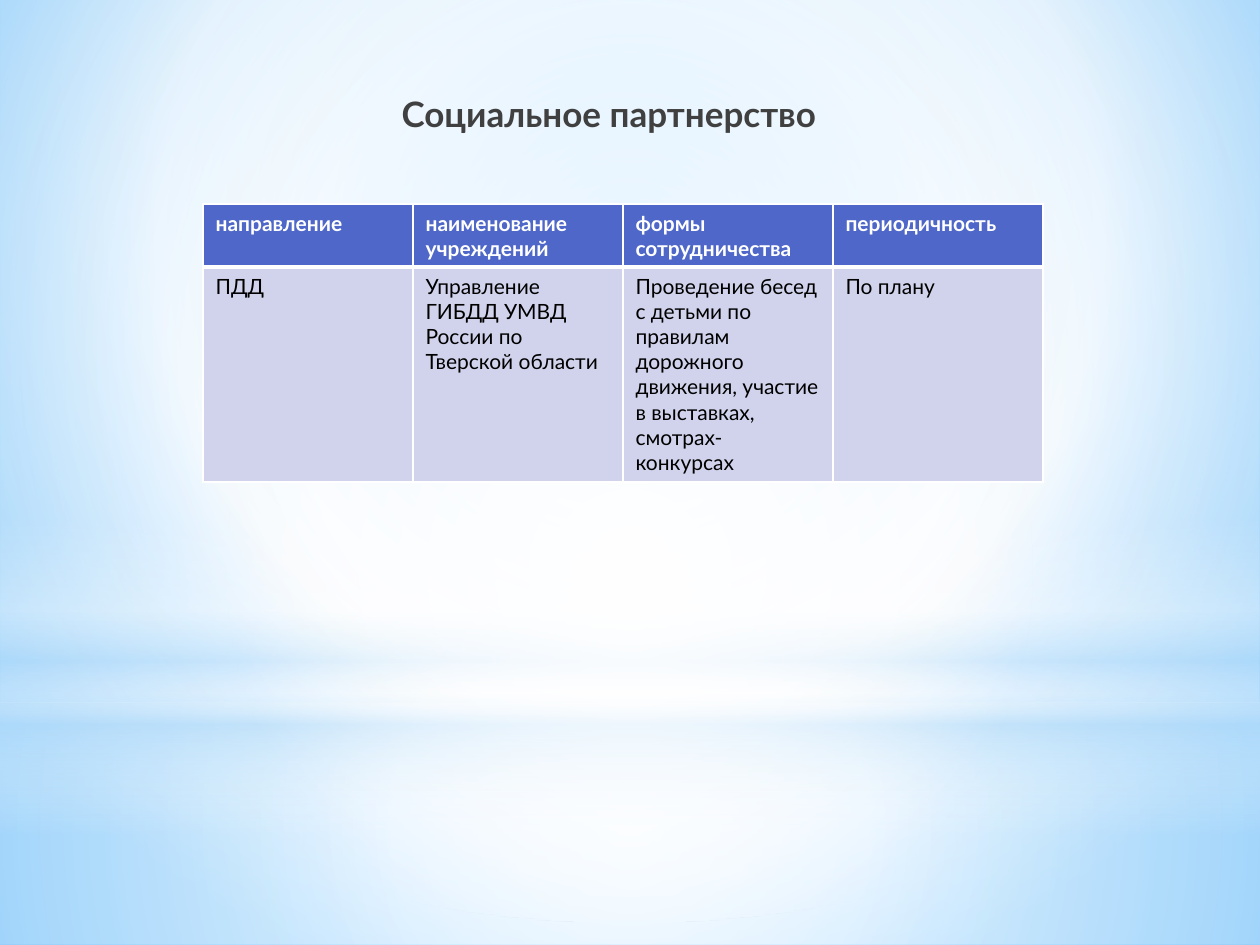
from dataclasses import dataclass

from lxml.etree import SubElement
from pptx import Presentation
from pptx.dml.color import RGBColor
from pptx.enum.shapes import MSO_SHAPE
from pptx.enum.text import MSO_ANCHOR, MSO_AUTO_SIZE, PP_ALIGN
from pptx.oxml import parse_xml
from pptx.oxml.ns import nsdecls, qn
from pptx.util import Pt

PX = 914400 // 126  # one px in EMU


@dataclass(frozen=True)
class Theme:
    font: str = "Lato"
    title_size: int = 20
    table_size: int = 12
    title: str = "404040"
    header: str = "4E67C8"
    body: str = "D0D3EB"
    white: str = "FFFFFF"
    black: str = "000000"
    haze: str = "B4DCFA"
    sky: str = "9ED5FF"
    edge: str = "5BB9FF"


THEME = Theme()
CENTRE = (50, 50, 50, 50)
HEADERS = ["направление", "наименование учреждений",
           "формы сотрудничества", "периодичность"]
PARTNERS = ["ПДД", "Управление ГИБДД УМВД России по Тверской области",
            "Проведение бесед с детьми по правилам дорожного движения, "
            "участие в выставках, смотрах-конкурсах", "По плану"]


def px(*lengths):
    return [length * PX for length in lengths]


def set_gradient(holder, stops, focus=None):
    """Replace an empty fill by a circular gradient, or a vertical one without focus."""
    gradient = parse_xml(f'<a:gradFill {nsdecls("a")} rotWithShape="1"/>')
    stop_list = SubElement(gradient, qn("a:gsLst"))
    for position, color, opacity in stops:
        stop = SubElement(stop_list, qn("a:gs"), pos=str(position * 1000))
        paint = SubElement(stop, qn("a:srgbClr"), val=color)
        if opacity < 100:
            SubElement(paint, qn("a:alpha"), val=str(opacity * 1000))
    if focus:
        circle = SubElement(gradient, qn("a:path"), path="circle")
        sides = {side: str(share * 1000) for side, share in zip("ltrb", focus)}
        SubElement(circle, qn("a:fillToRect"), **sides)
    else:
        SubElement(gradient, qn("a:lin"), ang="5400000", scaled="0")
    holder.replace(holder.find(qn("a:noFill")), gradient)


def add_span(para, text, size, color, bold):
    span = para.add_run()
    span.text = text
    span.font.name = THEME.font
    span.font.size = Pt(size)
    span.font.bold = bold
    span.font.color.rgb = RGBColor.from_string(color)


def add_backdrop(page, box):
    left, top, width, height = box
    white, haze = THEME.white, THEME.haze
    page.background.fill.background()
    backing = page._element.cSld.find(qn("p:bg")).find(qn("p:bgPr"))
    set_gradient(backing,
                 [(0, THEME.sky, 100), (60, white, 100), (100, THEME.edge, 100)],
                 (20, 10, 20, 60))
    horizon = 703
    layers = [
        # floor, sky, horizon band, central glow
        (MSO_SHAPE.RECTANGLE, horizon, height - horizon,
         [(0, white, 91), (37, white, 76), (100, haze, 79)], CENTRE),
        (MSO_SHAPE.RECTANGLE, 0, horizon,
         [(0, white, 89), (48, white, 62), (100, haze, 79)], CENTRE),
        (MSO_SHAPE.RECTANGLE, 519, 315,
         [(0, white, 0), (29, white, 30), (45, haze, 40), (55, white, 26),
          (65, haze, 60), (100, white, 0)], None),
        (MSO_SHAPE.OVAL, 220, horizon, [(0, white, 100), (56, white, 0)], CENTRE),
    ]
    for kind, offset, depth, stops, focus in layers:
        layer = page.shapes.add_shape(kind, *px(left, top + offset, width, depth))
        layer.shadow.inherit = False
        layer.line.fill.background()
        layer.fill.background()
        set_gradient(layer._element.spPr, stops, focus)


def add_title(page, box, text):
    title = page.shapes.title
    page.shapes._spTree.append(title._element)  # in front of the backdrop
    title.left, title.top, title.width, title.height = px(*box)
    frame = title.text_frame
    frame.word_wrap = True
    frame.auto_size = MSO_AUTO_SIZE.NONE
    frame.vertical_anchor = MSO_ANCHOR.TOP
    frame.margin_left, frame.margin_right = px(12, 54)  # sits left of centre
    para = frame.paragraphs[0]
    para.alignment = PP_ALIGN.CENTER
    add_span(para, text, THEME.title_size, THEME.title, True)


def set_borders(cell, **points):
    properties = cell._tc.get_or_add_tcPr()
    for index, side in enumerate("LRTB"):
        width = Pt(points.get(side, 1))
        properties.insert(index, parse_xml(
            f'<a:ln{side} {nsdecls("a")} w="{width}"><a:solidFill>'
            f'<a:srgbClr val="{THEME.white}"/></a:solidFill></a:ln{side}>'))


def add_partner_table(page, box, row_heights):
    table = page.shapes.add_table(2, len(HEADERS), *px(*box)).table
    for column in table.columns:
        column.width = box[2] * PX // len(HEADERS)
    styles = [(HEADERS, THEME.header, THEME.white, True, {"B": 3}),
              (PARTNERS, THEME.body, THEME.black, False, {"T": 3})]
    for row, height, style in zip(table.rows, row_heights, styles):
        row.height = height * PX
        texts, fill, color, bold, borders = style
        for cell, text in zip(row.cells, texts):
            cell.fill.solid()
            cell.fill.fore_color.rgb = RGBColor.from_string(fill)
            set_borders(cell, **borders)
            add_span(cell.text_frame.paragraphs[0], text,
                     THEME.table_size, color, bold)


def main():
    deck = Presentation()
    deck.slide_width, deck.slide_height = px(1260, 945)
    page = deck.slides.add_slide(deck.slide_layouts[5])
    add_backdrop(page, (0, 0, 1260, 945))
    add_title(page, (64, 86, 1132, 873), "Социальное партнерство")
    add_partner_table(page, (203, 204, 840, 277), (62, 215))
    deck.save("out.pptx")


if __name__ == "__main__":
    main()
